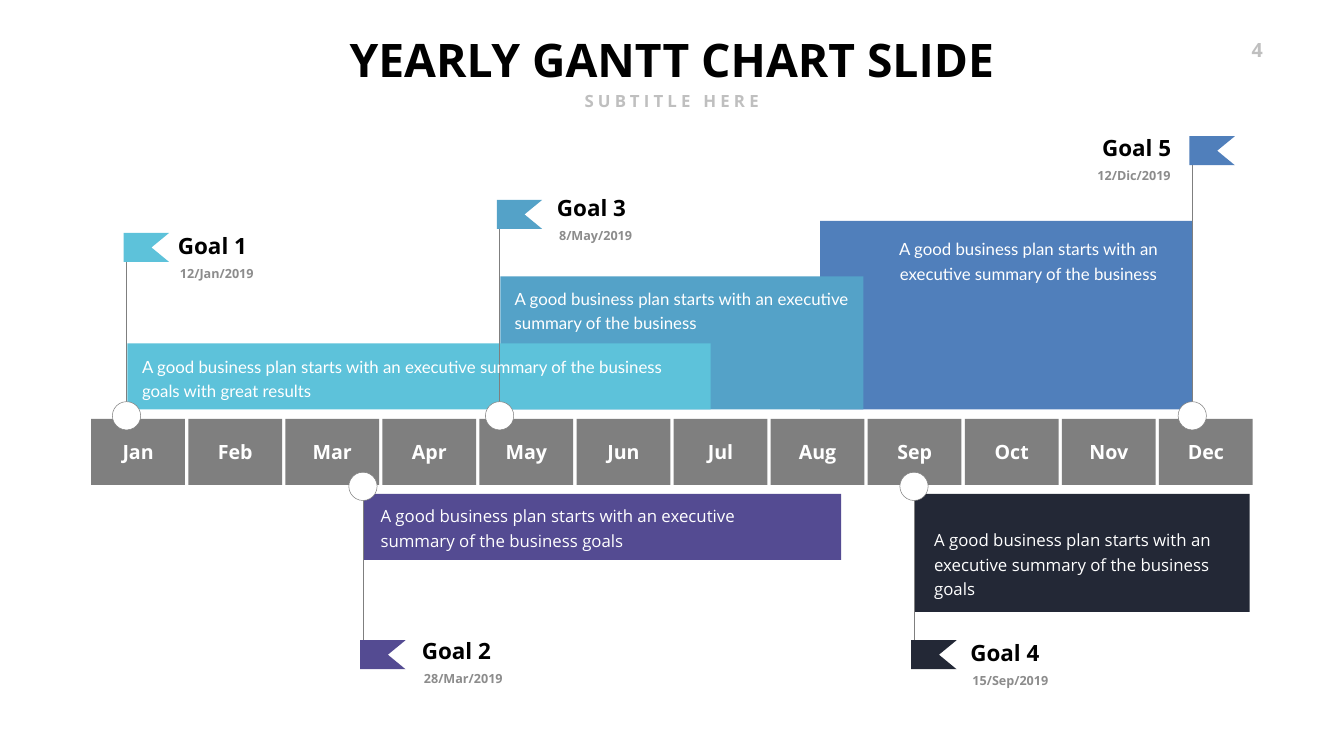
from pptx import Presentation
from pptx.dml.color import RGBColor
from pptx.enum.shapes import MSO_CONNECTOR as CONN, MSO_SHAPE as SHAPE
from pptx.enum.text import MSO_ANCHOR as ANCHOR, PP_ALIGN as ALIGN
from pptx.oxml.ns import qn
from pptx.util import Pt
from lxml.etree import SubElement

COLORS = {
    "black": "000000", "white": "FFFFFF", "light": "BFBFBF", "date": "8C8C8C",
    "gray": "7F7F7F", "cyan": "5DC2DA", "sky": "54A2C8", "blue": "507FBB",
    "purple": "544B92", "navy": "232836",
}
MONTHS = ["Jan", "Feb", "Mar", "Apr", "May", "Jun",
          "Jul", "Aug", "Sep", "Oct", "Nov", "Dec"]
PLAN = "A good business plan starts with an executive summary of the business"

# Back to front. pole: x of the pole; bar: width, height; flag: top;
# label: left, top; body: left, top, width, height
GOALS = [
    dict(name="Goal 5", date="12/Dic/2019", color="blue", pole=1702.8, above=True,
         bar=(531.4, 269.3), flag=194.6, label=(1529.8, 188.6), mirrored=True,
         text=PLAN, body=(1255, 331.9, 427.7, 74.2), font="Lato"),
    dict(name="Goal 4", date="15/Sep/2019", color="navy", pole=1305.4, above=False,
         bar=(478.1, 168.5), flag=914.6, label=(1378.8, 909.2), mirrored=False,
         text=PLAN + " goals", body=(1327, 749.5, 447.1, 110.2), font="Open Sans"),
    dict(name="Goal 2", date="28/Mar/2019", color="purple", pole=518.4, above=False,
         bar=(681.8, 94.3), flag=914.6, label=(595.4, 907.2), mirrored=False,
         text=PLAN + " goals", body=(536.4, 714.2, 597.6, 75.6), font="Open Sans"),
    dict(name="Goal 3", date="8/May/2019", color="sky", pole=713.5, above=True,
         bar=(518.4, 190.1), flag=285.6, label=(788.4, 274.3), mirrored=False,
         text=PLAN, body=(727.9, 402.5, 493.2, 75.6), font="Lato"),
    dict(name="Goal 1", date="12/Jan/2019", color="cyan", pole=180.7, above=True,
         bar=(833, 94.3), flag=332.8, label=(247, 327.6), mirrored=False,
         text=PLAN + " goals with great results",
         body=(195.8, 499.7, 766.8, 75.6), font="Lato"),
]

MONTH_LEFT, MONTH_TOP, MONTH_W, MONTH_H, MONTH_STEP = 130.3, 598.3, 133.9, 94.3, 138.63
BAR_BOTTOM, BAR_TOP, BAR_GAP = 585, 705.6, 1.2
DOT = 40.4
DOT_TOP = {True: 573.8, False: 674.6}
FLAG_W, FLAG_H, NOTCH = 64.8, 41.4, 25.2


def rgb(name):
    return RGBColor.from_string(COLORS[name])


def paint(sp, fill, line=None):
    sp.shadow.inherit = False
    sp.fill.solid()
    sp.fill.fore_color.rgb = rgb(fill)
    if line:
        sp.line.color.rgb = rgb(line)
        sp.line.width = Pt(0.75)
    else:
        sp.line.fill.background()


def add_block(s, kind, box, fill, line=None):
    sp = s.shapes.add_shape(kind, *map(Pt, box))
    paint(sp, fill, line)
    return sp


def write(sp, text, size, color, align=ALIGN.LEFT, bold=True,
          font="Open Sans", anchor=ANCHOR.TOP, spacing=0):
    """Fill a shape with one paragraph; spacing is the letter spacing in points."""
    tf = sp.text_frame
    tf.word_wrap = True
    tf.vertical_anchor = anchor
    p = tf.paragraphs[0]
    p.alignment = align
    p.font.size, p.font.bold, p.font.name = Pt(size), bold, font
    p.font.color.rgb = rgb(color)
    r = p.add_run()
    r.text = text
    if spacing:
        r._r.get_or_add_rPr().set("spc", str(spacing * 100))
    return p


def add_text(s, box, *args, **kwargs):
    return write(s.shapes.add_textbox(*map(Pt, box)), *args, **kwargs)


def add_bar(s, goal):
    w, h = goal["bar"]
    x = goal["pole"] - w if goal["mirrored"] else goal["pole"] + BAR_GAP
    y = BAR_BOTTOM - h if goal["above"] else BAR_TOP
    add_block(s, SHAPE.RECTANGLE, (x, y, w, h), goal["color"])


def add_marker(s, goal):
    """Draw the pole, the dot on the month row and the flag."""
    x, top = goal["pole"], goal["flag"]
    dot_top = DOT_TOP[goal["above"]]
    dot_edge = dot_top if goal["above"] else dot_top + DOT
    pole = s.shapes.add_connector(CONN.STRAIGHT, Pt(x), Pt(top + FLAG_H / 2),
                                  Pt(x), Pt(dot_edge))
    pole.line.color.rgb = rgb("gray")
    pole.line.width = Pt(0.75)
    SubElement(pole._element.spPr, qn("a:effectLst"))
    add_block(s, SHAPE.OVAL, (x - DOT / 2, dot_top, DOT, DOT), "white", "gray")

    left, right, bottom = x - 4, x - 4 + FLAG_W, top + FLAG_H
    fb = s.shapes.build_freeform(Pt(left), Pt(top))
    outline = [(right, top), (right - NOTCH, top + FLAG_H / 2), (right, bottom), (left, bottom)]
    fb.add_line_segments([(Pt(a), Pt(b)) for a, b in outline], close=True)
    paint(fb.convert_to_shape(), goal["color"])


def add_goal_text(s, goal):
    x, y = goal["label"]
    align, shift = (ALIGN.RIGHT, -0.7) if goal["mirrored"] else (ALIGN.LEFT, 3)
    p = add_text(s, goal["body"], goal["text"], 24, "white", bold=False, font=goal["font"],
                 align=ALIGN.CENTER if goal["mirrored"] else ALIGN.LEFT,
                 anchor=ANCHOR.TOP if goal["above"] else ANCHOR.BOTTOM)
    p.line_spacing = Pt(35)
    add_text(s, (x, y, 150, 46), goal["name"], 32, "black", align)
    add_text(s, (x + shift, y + 48.1, 150, 28.8), goal["date"], 18, "date", align)


def main():
    prs = Presentation()
    prs.slide_width, prs.slide_height = Pt(1919.52), Pt(1080)
    s = prs.slides.add_slide(prs.slide_layouts[5])

    title = s.shapes.title
    title.left, title.top, title.width, title.height = map(Pt, (475.9, 41.8, 967.7, 87.1))
    write(title, "YEARLY GANTT CHART SLIDE", 66, "black", ALIGN.CENTER)
    add_text(s, (820, 126.7, 278.6, 36), "SUBTITLE HERE", 24, "light", ALIGN.CENTER, spacing=6)
    add_text(s, (1748.2, 50.4, 62.6, 41), "4", 28, "light", ALIGN.RIGHT, spacing=3)

    for goal in GOALS:
        add_bar(s, goal)
    for i, month in enumerate(MONTHS):
        box = (MONTH_LEFT + i * MONTH_STEP, MONTH_TOP, MONTH_W, MONTH_H)
        write(add_block(s, SHAPE.RECTANGLE, box, "gray"), month, 28, "white",
              ALIGN.CENTER, anchor=ANCHOR.MIDDLE)
    for goal in GOALS:
        add_marker(s, goal)
    for goal in GOALS:
        add_goal_text(s, goal)

    prs.save("out.pptx")


if __name__ == "__main__":
    main()
